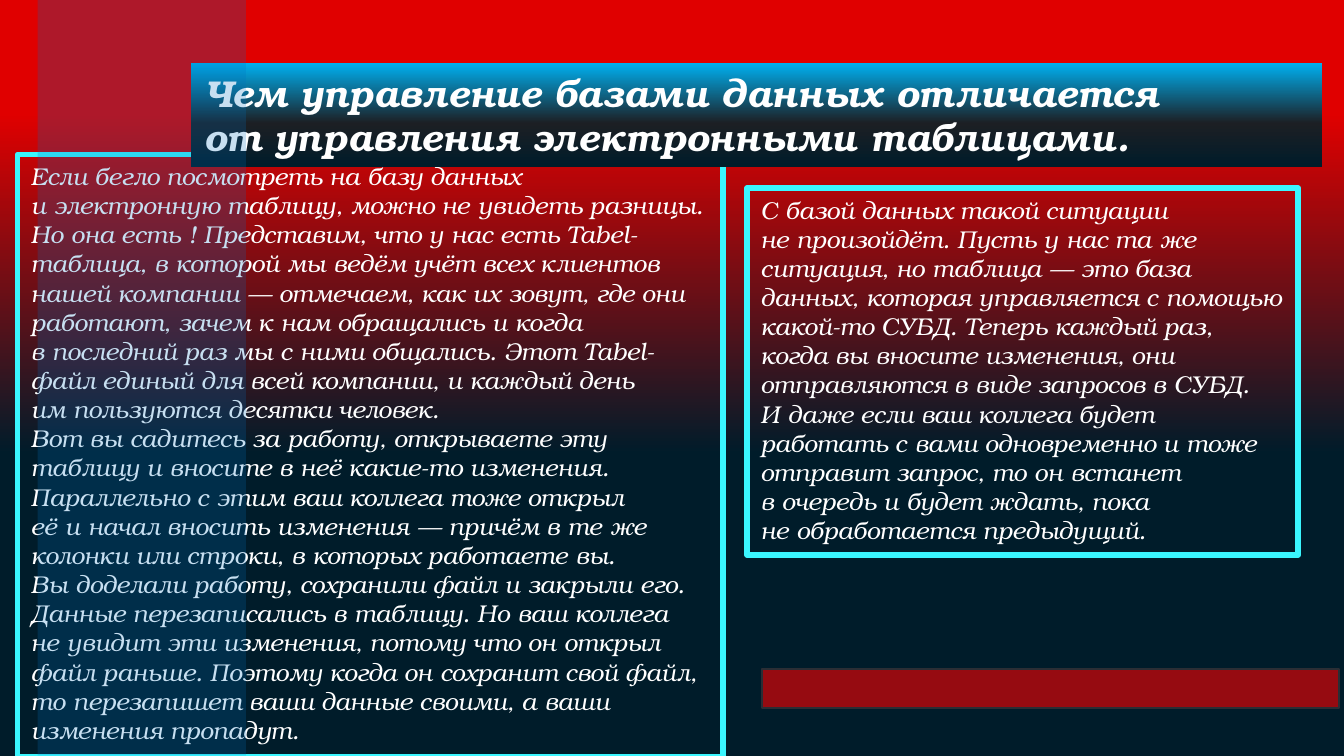
import copy

import pptx
import pptx.dml.color
import pptx.enum.shapes
import pptx.enum.text
import pptx.oxml
import pptx.oxml.ns
import pptx.util
from pptx.util import Inches

COLORS = {
    "red": "E00000",
    "night": "001C2A",
    "sky": "00B0F0",
    "graphite": "1C1F24",
    "cyan": "3AF6FF",
    "white": "FFFFFF",
    "blue": "0070C0",
    "bright_red": "FF0000",
    "slate": "2A2E35",
}
FONT = "TeX Gyre Bonum"
NO_BREAK_SPACE = chr(160)


def rgb(name):
    return pptx.dml.color.RGBColor.from_string(COLORS[name])


def paint_gradient(fill, owner, stops):
    fill.gradient()
    fill.gradient_angle = 270
    stop_list = owner._element.find(".//" + pptx.oxml.ns.qn("a:gsLst"))
    for _ in stops[2:]:
        stop_list.append(copy.deepcopy(stop_list[0]))
    for stop, (position, color) in zip(fill.gradient_stops, stops):
        stop.position = position
        stop.color.rgb = rgb(color)


presentation = pptx.Presentation()
presentation.slide_width = Inches(10)
presentation.slide_height = presentation.slide_width * 9 // 16
slide = presentation.slides.add_slide(presentation.slide_layouts[6])
paint_gradient(slide.background.fill, slide, [(0.15, "red"), (0.6, "night")])

spreadsheet_story = [
    "Если бегло посмотреть на_базу данных и_электронную таблицу, можно не_увидеть разницы. "
    "Но_она есть_! Представим, что у_нас есть Tabel-таблица, в_которой мы_ведём учёт всех "
    "клиентов нашей компании_— отмечаем, как их_зовут, где они работают, зачем к_нам "
    "обращались и_когда в_последний раз мы_с_ними общались. Этот Tabel-файл единый для всей "
    "компании, и_каждый день им_пользуются десятки человек.",
    "Вот вы_садитесь за_работу, открываете эту таблицу и_вносите в_неё какие-то изменения. "
    "Параллельно с_этим ваш коллега тоже открыл её_и_начал вносить изменения_— причём "
    "в_те_же колонки или строки, в_которых работаете_вы. Вы_доделали работу, сохранили файл "
    "и_закрыли_его. Данные перезаписались в_таблицу. Но_ваш коллега не_увидит эти изменения, "
    "потому что он_открыл файл раньше. Поэтому когда он_сохранит свой файл, то_перезапишет "
    "ваши данные своими, а_ваши изменения пропадут.",
]
heading = ["Чем управление базами данных отличается от_управления электронными таблицами."]
database_story = [
    "С базой данных такой ситуации не_произойдёт. Пусть у_нас та_же ситуация, но_таблица_— "
    "это база данных, которая управляется с_помощью какой-то СУБД. Теперь каждый раз, когда "
    "вы_вносите изменения, они отправляются в_виде запросов в_СУБД. И_даже если ваш коллега "
    "будет работать с_вами одновременно и_тоже отправит запрос, то_он_встанет в_очередь "
    "и_будет ждать, пока не_обработается предыдущий."
]

panels = [
    ((0.13, 1.15, 5.25, 4.48), None, None, ("cyan", 3), spreadsheet_story, 13),
    ((1.42, 0.47, 8.42, 0.77), "gradient", None, None, heading, 20),
    ((0.28, 0, 1.55, 5.62), "blue", 22, None, [], None),
    ((5.67, 4.98, 4.29, 0.29), "bright_red", 59, ("slate", 1), [], None),
    ((5.56, 1.4, 4.1, 2.73), None, None, ("cyan", 3), database_story, 13),
]

for box, fill, opacity, outline, paragraphs, size in panels:
    panel = slide.shapes.add_shape(
        pptx.enum.shapes.MSO_SHAPE.RECTANGLE, *[Inches(length) for length in box]
    )
    panel.shadow.inherit = False

    if fill is None:
        panel.fill.background()
    elif fill == "gradient":
        paint_gradient(
            panel.fill, panel, [(0, "sky"), (0.58, "graphite"), (1, "night")]
        )
    else:
        panel.fill.solid()
        panel.fill.fore_color.rgb = rgb(fill)
        tint = panel._element.spPr.find(".//" + pptx.oxml.ns.qn("a:srgbClr"))
        alpha = pptx.oxml.parse_xml(
            f'<a:alpha {pptx.oxml.ns.nsdecls("a")} val="{opacity * 1000}"/>'
        )
        tint.append(alpha)

    if outline:
        color, width = outline
        panel.line.color.rgb = rgb(color)
        panel.line.width = pptx.util.Pt(width)
    else:
        panel.line.fill.background()

    if paragraphs:
        frame = panel.text_frame
        frame.word_wrap = True
        frame.auto_size = pptx.enum.text.MSO_AUTO_SIZE.SHAPE_TO_FIT_TEXT
        frame.vertical_anchor = pptx.enum.text.MSO_ANCHOR.TOP
        frame.text = "\n".join(paragraphs).replace("_", NO_BREAK_SPACE)
        for paragraph in frame.paragraphs:
            paragraph.alignment = pptx.enum.text.PP_ALIGN.LEFT
            paragraph.font.name = FONT
            paragraph.font.size = pptx.util.Pt(size)
            paragraph.font.italic = True
            paragraph.font.bold = paragraphs is heading
            paragraph.font.color.rgb = rgb("white")

presentation.save("out.pptx")
